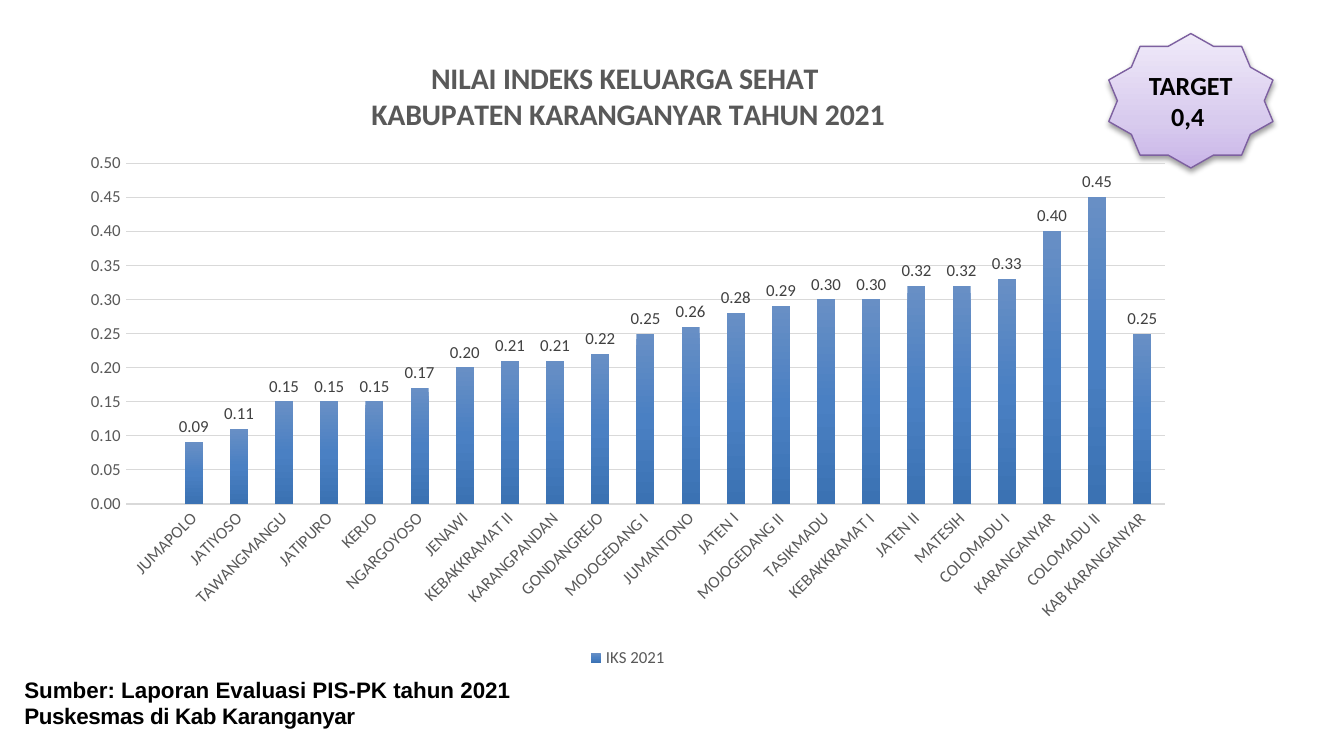
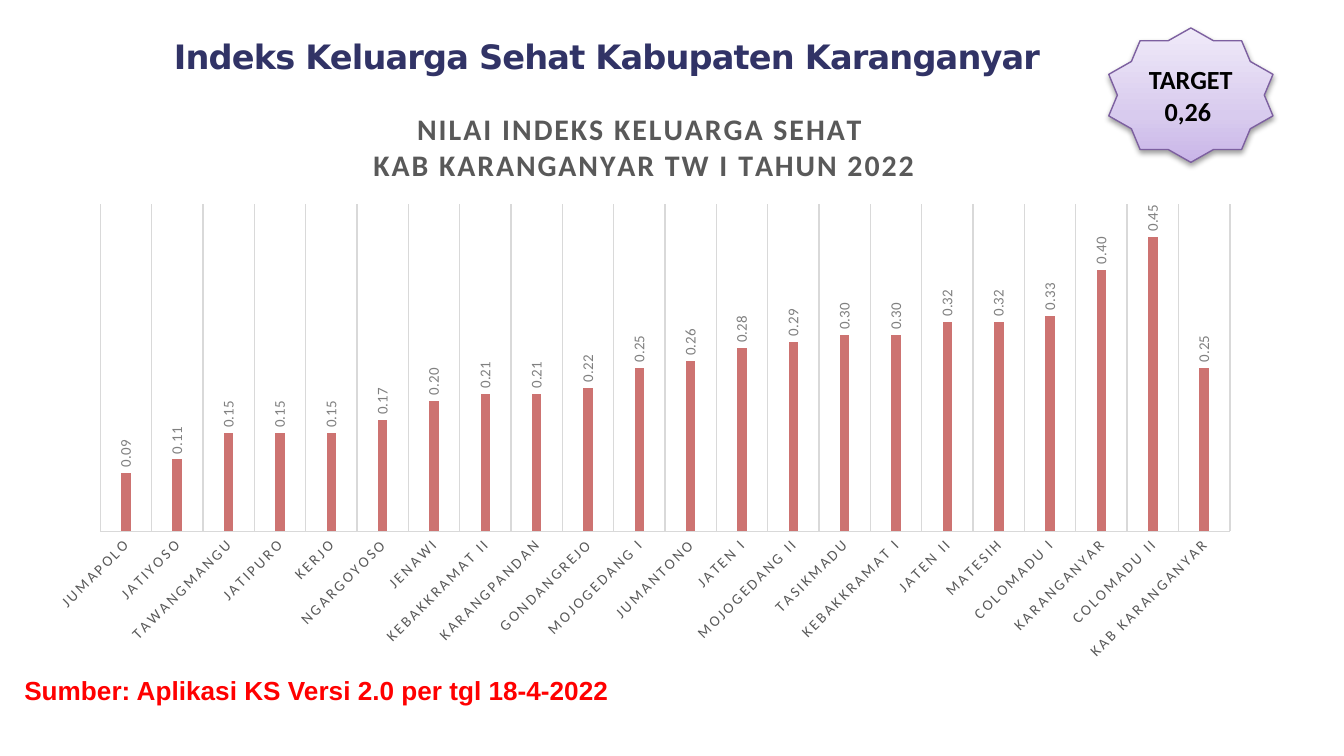
from dataclasses import dataclass
from lxml.etree import SubElement as Sub
from pptx import Presentation
from pptx.chart.data import CategoryChartData as Data
from pptx.dml.color import RGBColor as RGB
from pptx.enum.chart import XL_CHART_TYPE as Kind, XL_LABEL_POSITION as Spot
from pptx.enum.chart import XL_LEGEND_POSITION as Side, XL_TICK_MARK as Tick
from pptx.enum.shapes import MSO_CONNECTOR as Link, MSO_SHAPE as Form
from pptx.enum.text import MSO_ANCHOR as Anchor, PP_ALIGN as Align
from pptx.oxml import parse_xml
from pptx.oxml.ns import nsdecls, qn
from pptx.util import Pt


@dataclass(frozen=True)
class Theme:
    white: str = "FFFFFF"
    black: str = "000000"
    navy: str = "313366"
    red: str = "FF0000"
    gray: str = "595959"
    dark: str = "404040"
    pale: str = "808080"
    rule: str = "D9D9D9"
    edge: str = "7D60A0"
    lilac: tuple = ((0, "C9B5E8"), (35, "D8CBEE"), (100, "F0EAF9"))
    blue: tuple = ((0, "688FC5"), (50, "4A80C3"), (100, "3B72B3"))
    tints: tuple = ("C0504D", "8064A2", "F79646", "772C2A", "4D3B62", "B65708", "CD7371")
    body: str = "Calibri"
    plain: str = "Arial"
    head: str = "DejaVu Sans"
    title: int = 18
    chart: int = 16
    badge: int = 14
    note: int = 12
    base: int = 10
    axis: int = 9
    small: int = 8


T = Theme()

AREAS = [
    "JUMAPOLO", "JATIYOSO", "TAWANGMANGU", "JATIPURO", "KERJO", "NGARGOYOSO",
    "JENAWI", "KEBAKKRAMAT II", "KARANGPANDAN", "GONDANGREJO", "MOJOGEDANG I",
    "JUMANTONO", "JATEN I", "MOJOGEDANG II", "TASIKMADU", "KEBAKKRAMAT I",
    "JATEN II", "MATESIH", "COLOMADU I", "KARANGANYAR", "COLOMADU II",
    "KAB KARANGANYAR",
]
SCORES = [
    0.09, 0.11, 0.15, 0.15, 0.15, 0.17, 0.20, 0.21, 0.21, 0.22, 0.25,
    0.26, 0.28, 0.29, 0.30, 0.30, 0.32, 0.32, 0.33, 0.40, 0.45, 0.25,
]


def style(font, size, color, face=T.body, bold=False, gap=0):
    font.size = Pt(size)
    font.name = face
    font.bold = bold
    font.color.rgb = RGB.from_string(color)
    if gap:
        font._rPr.set("spc", str(round(gap * 100)))


def text(para, words, **look):
    run = para.add_run()
    run.text = words
    style(run.font, **look)


def box(slide, left, top, width, height):
    frame = slide.shapes.add_textbox(Pt(left), Pt(top), Pt(width), Pt(height)).text_frame
    frame.word_wrap = True
    frame.margin_left = frame.margin_right = frame.margin_bottom = 0
    frame.margin_top = Pt(1)
    return frame.paragraphs[0]


def rule(line, width=0.75, color=T.rule):
    line.color.rgb = RGB.from_string(color)
    line.width = Pt(width)


def sheet(deck):
    slide = deck.slides.add_slide(deck.slide_layouts[6])
    strip = slide.shapes.add_connector(Link.STRAIGHT, Pt(8), 0, Pt(8), Pt(52))
    rule(strip.line, 0.48, T.white)
    Sub(strip._element.spPr, qn("a:effectLst"))
    return slide


def blend(fill, props, stops, angle):
    fill.gradient()
    fill.gradient_angle = angle
    group = props.find(qn("a:gradFill")).find(qn("a:gsLst"))
    for old in list(group):
        group.remove(old)
    for place, color in stops:
        stop = Sub(group, qn("a:gs"), pos=str(place * 1000))
        Sub(stop, qn("a:srgbClr"), val=color)


def badge(slide, top, words):
    star = slide.shapes.add_shape(Form.STAR_10_POINT, Pt(594), Pt(top), Pt(88), Pt(72))
    props = star._element.spPr
    blend(star.fill, props, T.lilac, 90)
    rule(star.line, color=T.edge)
    star.shadow.inherit = False
    shade = Sub(props.find(qn("a:effectLst")), qn("a:outerShdw"), blurRad=str(Pt(3.1)),
                dist=str(Pt(1.6)), dir="5400000", rotWithShape="0")
    Sub(Sub(shade, qn("a:srgbClr"), val=T.black), qn("a:alpha"), val="38000")
    frame = star.text_frame
    frame.word_wrap = True
    frame.vertical_anchor = Anchor.MIDDLE
    para = frame.paragraphs[0]
    para.alignment = Align.CENTER
    text(para, words, size=T.badge, color=T.black, bold=True)


def place(parent, area, spot, inner=False):
    old = parent.find(qn("c:layout"))
    order = 0 if old is None else parent.index(old)
    if old is not None:
        parent.remove(old)
    node = parse_xml(f"<c:layout {nsdecls('c')}/>")
    parent.insert(order, node)
    manual = Sub(node, qn("c:manualLayout"))
    if inner:
        Sub(manual, qn("c:layoutTarget"), val="inner")
    for axis in "xy":
        Sub(manual, qn(f"c:{axis}Mode"), val="edge")
    left, top, width, height = area
    starts = (left, top, 0, 0)
    sizes = (width, height, width, height)
    for key, value, start, size in zip("xywh", spot, starts, sizes):
        Sub(manual, qn(f"c:{key}"), val=f"{(value - start) / size:.5f}")


def turn(item, angle):
    item._element.find(qn("c:txPr")).find(qn("a:bodyPr")).set("rot", str(angle * 60000))


def bars(slide, area, names, rows, lines, head, inner, gap, size, wide=0, track=0):
    data = Data(number_format="0.00")
    data.categories = names
    for name, values in rows:
        data.add_series(name, values)
    chart = slide.shapes.add_chart(Kind.COLUMN_CLUSTERED, *map(Pt, area), data).chart
    style(chart.font, T.base, T.black)
    root = chart._chartSpace
    body = root.find(qn("c:chart"))
    body.addnext(parse_xml(
        f"<c:spPr {nsdecls('c', 'a')}><a:noFill/><a:ln><a:noFill/></a:ln></c:spPr>"))

    chart.has_title = True
    title = chart.chart_title
    frame = title.text_frame
    for count, words in enumerate(lines):
        para = frame.add_paragraph() if count else frame.paragraphs[0]
        para.alignment = Align.CENTER
        text(para, words, size=T.chart, color=T.gray, bold=True, gap=wide)
    place(title._element, area, head)
    place(body.find(qn("c:plotArea")), area, inner, True)

    plot = chart.plots[0]
    plot.gap_width = gap
    plot.vary_by_categories = False
    plot.has_data_labels = True
    marks = plot.data_labels
    marks.show_value = True
    marks.number_format = "0.00"
    marks.number_format_is_linked = False
    marks.position = Spot.OUTSIDE_END

    base = chart.category_axis
    base.major_tick_mark = Tick.NONE
    style(base.tick_labels.font, size, T.gray, gap=track)
    turn(base, -45)
    scale = chart.value_axis
    scale.minimum_scale = 0
    scale.maximum_scale = 0.5
    scale.major_unit = 0.05
    scale.major_tick_mark = Tick.NONE
    chart.has_legend = False
    return chart


def first(deck):
    slide = sheet(deck)
    note = box(slide, 13, 361, 317, 30)
    look = dict(size=T.note, color=T.black, face=T.plain, bold=True)
    text(note, "Sumber: Laporan Evaluasi PIS-PK tahun 2021 ", **look)
    text(note, "Puskesmas di Kab Karanganyar", gap=-0.2, **look)
    badge(slide, 18, "TARGET 0,4 ")
    chart = bars(
        slide, (36.7, 18.7, 599, 342), ["", *AREAS], [("IKS 2021", [None, *SCORES])],
        ("NILAI INDEKS KELUARGA SEHAT ", "KABUPATEN KARANGANYAR TAHUN 2021"),
        (196.8, 29.2), (67.5, 87.5, 556.6, 182.4), 150, T.axis)
    plot = chart.plots[0]
    style(plot.data_labels.font, T.axis, T.dark)
    series = plot.series[0]
    blend(series.format.fill, series._element.find(qn("c:spPr")), T.blue, 270)
    rule(chart.category_axis.format.line, 1)
    scale = chart.value_axis
    rule(scale.major_gridlines.format.line)
    scale.format.line.fill.background()
    scale.tick_labels.number_format = "0.00"
    scale.tick_labels.number_format_is_linked = False
    style(scale.tick_labels.font, T.axis, T.gray)
    chart.has_legend = True
    chart.legend.position = Side.BOTTOM
    chart.legend.include_in_layout = False
    style(chart.legend.font, T.axis, T.gray)


def second(deck):
    slide = sheet(deck)
    text(box(slide, 93.2, 18, 610, 23), "Indeks Keluarga Sehat Kabupaten Karanganyar",
         size=T.title, color=T.navy, face=T.head, bold=True, gap=-0.45)
    text(box(slide, 13, 360.4, 317, 18), "Sumber: Aplikasi KS Versi 2.0 per tgl 18-4-2022",
         size=T.badge, color=T.red, face=T.plain, bold=True)
    badge(slide, 15, "TARGET 0,26 ")
    last = len(T.tints)
    rows = [(f"Series {n}", SCORES if n == last else []) for n in range(1, last + 1)]
    chart = bars(
        slide, (18, 46.8, 653.8, 314), AREAS, rows,
        ("NILAI INDEKS KELUARGA SEHAT ", "KAB KARANGANYAR TW I TAHUN 2022"),
        (197.9, 56.7), (53.7, 109.5, 605.2, 175.3), 444, T.small, wide=1.2, track=1.2)
    plot = chart.plots[0]
    plot.overlap = -90
    style(plot.data_labels.font, T.small, T.pale)
    turn(plot.data_labels, -90)
    for series, tint in zip(plot.series, T.tints):
        fill = series.format.fill
        fill.solid()
        fill.fore_color.rgb = RGB.from_string(tint)
    base = chart.category_axis
    base.has_major_gridlines = True
    rule(base.major_gridlines.format.line)
    rule(base.format.line)
    chart.value_axis.has_major_gridlines = False
    chart.value_axis.visible = False


def main():
    deck = Presentation()
    deck.slide_width = Pt(720)
    deck.slide_height = Pt(405)
    first(deck)
    second(deck)
    deck.save("out.pptx")


if __name__ == "__main__":
    main()
